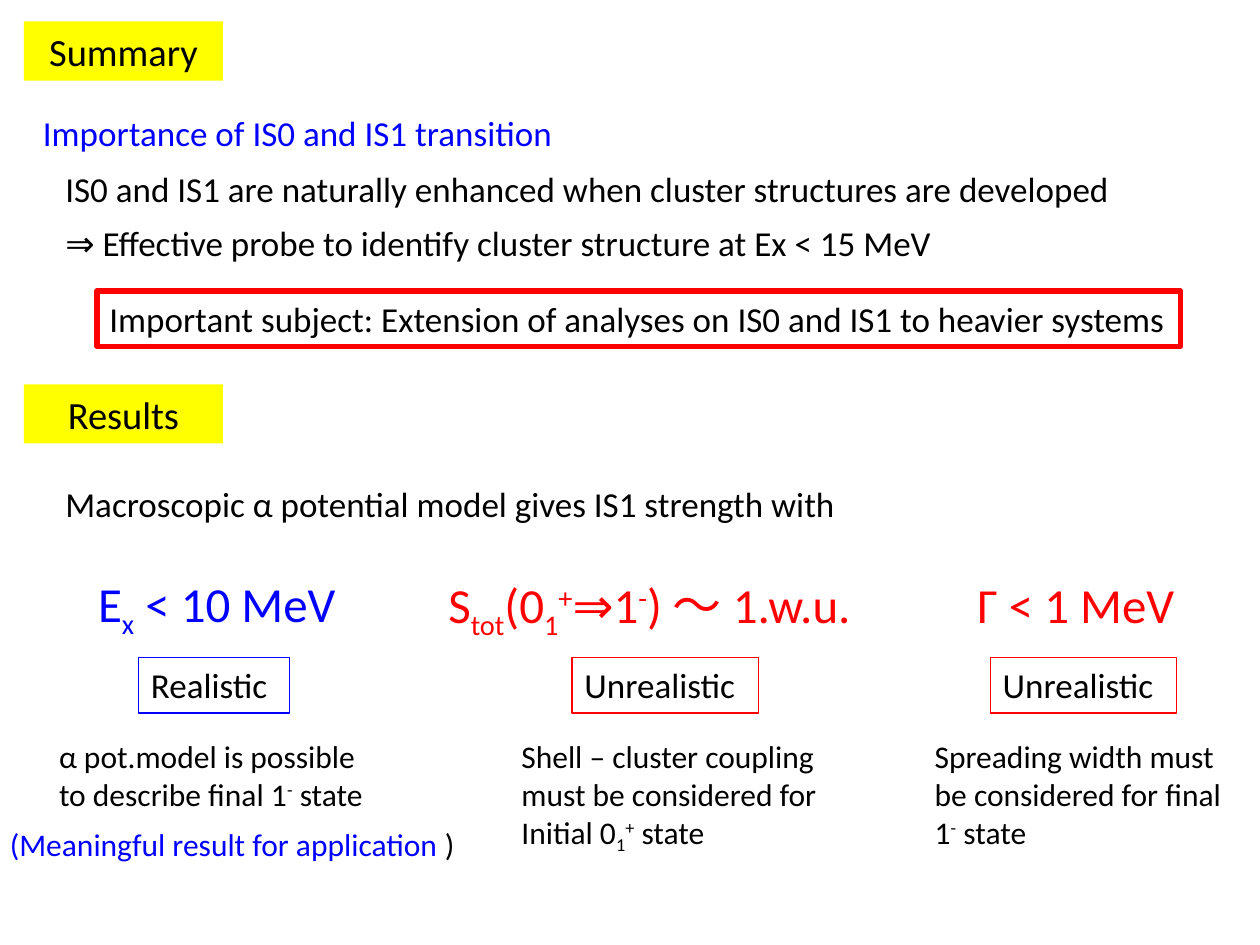
from pptx import Presentation
from pptx.dml.color import RGBColor
from pptx.enum.shapes import MSO_SHAPE
from pptx.enum.text import MSO_ANCHOR, MSO_AUTO_SIZE, PP_ALIGN
from pptx.util import Inches, Pt

RECT = MSO_SHAPE.RECTANGLE
TOP, MIDDLE = MSO_ANCHOR.TOP, MSO_ANCHOR.MIDDLE
LEFT, CENTER = PP_ALIGN.LEFT, PP_ALIGN.CENTER
FIT, FIXED = MSO_AUTO_SIZE.SHAPE_TO_FIT_TEXT, MSO_AUTO_SIZE.NONE

COLORS = {"black": "000000", "blue": "0000FF", "red": "FF0000", "yellow": "FFFF00"}
BASELINES = {"_": "-25000", "^": "30000"}


class SummarySlide:
    """Style and slide; in text, "|" splits runs and a leading _ or ^ lowers or raises one."""

    font = "Calibri"

    def __init__(self, prs):
        self.s = prs.slides.add_slide(prs.slide_layouts[6])

    def color(self, name):
        return RGBColor.from_string(COLORS[name])

    def fill_text(self, sp, lines, size, color="black", align=LEFT, anchor=TOP, wrap=False, fit=FIT):
        tf = sp.text_frame
        tf.word_wrap, tf.auto_size, tf.vertical_anchor = wrap, fit, anchor
        for i, line in enumerate(lines):
            p = tf.paragraphs[0] if i == 0 else tf.add_paragraph()
            p.alignment = align
            p.font.name, p.font.size = self.font, Pt(size)
            p.font.color.rgb = self.color(color)
            for part in line.split("|"):
                r = p.add_run()
                r.text = part.lstrip("_^")
                if part[0] in BASELINES:
                    r._r.get_or_add_rPr().set("baseline", BASELINES[part[0]])

    def text(self, box, lines, size=20, **style):
        sp = self.s.shapes.add_textbox(*map(Inches, box))
        self.fill_text(sp, lines, size, **style)
        return sp

    def rect(self, box):
        sp = self.s.shapes.add_shape(RECT, *map(Inches, box))
        sp.shadow.inherit = False
        return sp

    def heading(self, top, title):
        sp = self.rect((0.19, top, 1.58, 0.47))
        sp.fill.solid()
        sp.fill.fore_color.rgb = self.color("yellow")
        sp.line.fill.background()
        self.fill_text(sp, [title], 22, align=CENTER, anchor=MIDDLE, wrap=True, fit=FIXED)

    def framed(self, box, label, color, width=0.75):
        sp = self.rect(box)
        sp.fill.background()
        sp.line.color.rgb = self.color(color)
        sp.line.width = Pt(width)
        self.fill_text(sp, [label], 20)


def main():
    prs = Presentation()
    prs.slide_width, prs.slide_height = Inches(10), Inches(7.5)
    page = SummarySlide(prs)

    page.heading(0.17, "Summary")
    page.text((0.18, 0.89, 9.74, 0.33), [" Importance of IS0 and IS1 transition"],
              color="blue", anchor=MIDDLE, wrap=True, fit=FIXED)
    for top, line in (
        (1.28, "IS0 and IS1 are naturally enhanced when cluster structures are developed"),
        (1.71, "⇒ Effective probe to identify cluster structure at Ex < 15 MeV"),
    ):
        page.text((0.42, top, 9.21, 0.44), [line], wrap=True)
    page.framed((0.77, 2.31, 8.6, 0.44),
                "Important subject: Extension of analyses on IS0 and IS1 to heavier systems",
                "red", 3)

    page.heading(3.05, "Results")
    page.text((0.42, 3.78, 6.5, 0.44), ["Macroscopic α potential model gives IS1 strength with"])

    results = (
        ("blue", (0.68, 4.5, 2.18, 0.57), "E|_x| < 10 MeV",
         (1.1, 1.2), "Realistic", (0.37, 2.71),
         ["α pot.model is possible", "to describe final 1|^-| state"]),
        ("red", (3.46, 4.51, 3.83, 0.57), "S|_tot|(0|_1|^+|⇒1|^-|) ～ 1.w.u.",
         (4.54, 1.48), "Unrealistic", (4.04, 2.63),
         ["Shell – cluster coupling", "must be considered for", "Initial 0|_1|^+| state"]),
        ("red", (7.66, 4.51, 1.9, 0.57), "Γ < 1 MeV",
         (7.86, 1.48), "Unrealistic", (7.32, 2.51),
         ["Spreading width must", "be considered for final", "1|^-| state"]),
    )
    for color, box, formula, (left, width), verdict, (note_left, note_width), note in results:
        page.text(box, [formula], 28, color=color, wrap=color == "red")
        page.framed((left, 5.22, width, 0.44), verdict, color)
        page.text((note_left, 5.8, note_width, 0.1 + 0.3 * len(note)), note, 18)

    sp = page.text((-0.02, 6.5, 3.77, 0.4), ["(Meaningful result for application |)"],
                   18, color="blue")
    sp.text_frame.paragraphs[0].runs[-1].font.color.rgb = page.color("black")

    prs.save("out.pptx")


if __name__ == "__main__":
    main()
